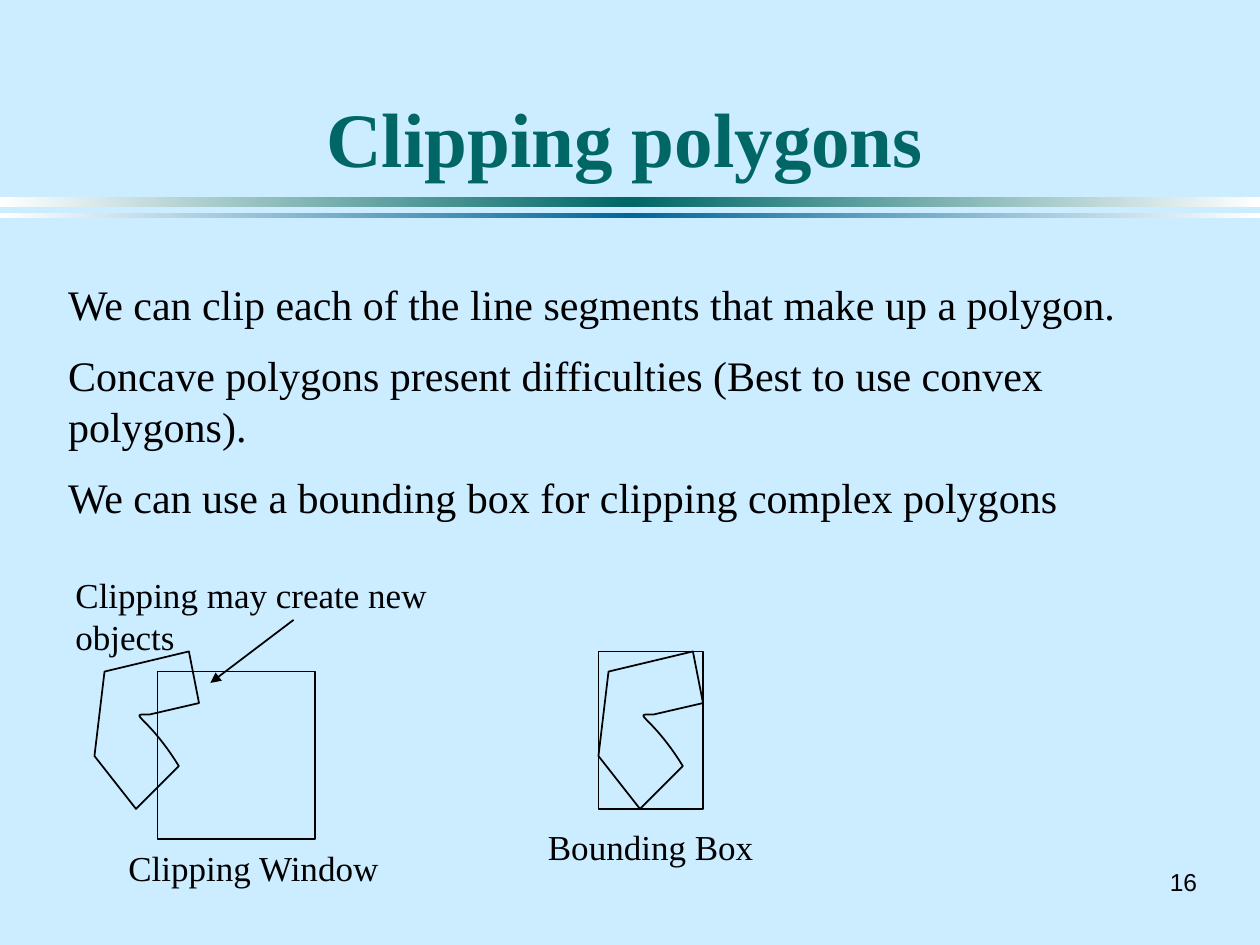
from copy import deepcopy

from pptx import Presentation
from pptx.dml.color import RGBColor
from pptx.enum.shapes import MSO_CONNECTOR, MSO_SHAPE
from pptx.enum.text import MSO_ANCHOR, MSO_AUTO_SIZE, PP_ALIGN
from pptx.oxml.ns import qn
from pptx.util import Inches, Pt

SKY = RGBColor(0xCC, 0xEC, 0xFF)
TEAL = RGBColor(0x00, 0x66, 0x66)
BLUE = RGBColor(0x00, 0x66, 0x99)
WHITE = RGBColor(0xFF, 0xFF, 0xFF)
BLACK = RGBColor(0x00, 0x00, 0x00)
SERIF = "Times New Roman"

STATEMENTS = (
    "We can clip each of the line segments that make up a polygon.",
    "Concave polygons present difficulties (Best to use convex polygons).",
    "We can use a bounding box for clipping complex polygons",
)

# Polygon measured from the top left corner of its bounding box
POLYGON_SIZE = (0.83, 1.25)
CURVE = ((0.67, 0.91), (0.41, 0.49), (0.25, 0.5), (0.44, 0.5))
CORNERS = ((0.83, 0.41), (0.75, 0), (0.08, 0.16), (0, 0.83), (0.33, 1.25))


def place(shape, left, top, width, height):
    shape.left, shape.top = Inches(left), Inches(top)
    shape.width, shape.height = Inches(width), Inches(height)


def add_span(para, text, size, color=BLACK, font=SERIF, bold=False):
    span = para.add_run()
    span.text = text
    span.font.size = Pt(size)
    span.font.name = font
    span.font.bold = bold
    span.font.color.rgb = color


def set_title(page, text):
    title = page.shapes.title
    place(title, 0.67, 0.25, 8.58, 1.25)
    frame = title.text_frame
    frame.auto_size = MSO_AUTO_SIZE.NONE
    frame.vertical_anchor = MSO_ANCHOR.BOTTOM
    para = frame.paragraphs[0]
    para.alignment = PP_ALIGN.CENTER
    add_span(para, text, 44, TEAL, bold=True)


def set_body(page, statements):
    body = page.placeholders[1]
    place(body, 0.44, 2.16, 9.06, 2.1)
    frame = body.text_frame
    frame.auto_size = MSO_AUTO_SIZE.NONE
    for index, statement in enumerate(statements):
        para = frame.add_paragraph() if index else frame.paragraphs[0]
        para.space_before = Pt(12 if index else 0)
        properties = para._p.get_or_add_pPr()
        properties.set("marL", "0")
        properties.set("indent", "0")
        properties.append(properties.makeelement(qn("a:buNone"), {}))
        add_span(para, statement, 24)


def add_label(page, text, left, top, width, height=0.43, size=20, font=SERIF,
              align=PP_ALIGN.LEFT, wrap=False):
    box = page.shapes.add_textbox(Inches(left), Inches(top), Inches(width), Inches(height))
    box.text_frame.word_wrap = wrap
    para = box.text_frame.paragraphs[0]
    para.alignment = align
    add_span(para, text, size, font=font)


def add_gradient_bar(page, top, height, color):
    """Full-width bar that fades from the middle colour to white at both ends."""
    bar = page.shapes.add_shape(MSO_SHAPE.RECTANGLE, 0, Inches(top), Inches(10), Inches(height))
    bar.shadow.inherit = False
    bar.line.fill.background()
    bar.fill.gradient()
    bar.fill.gradient_angle = 0
    stop_list = bar._element.spPr.find(qn("a:gradFill")).find(qn("a:gsLst"))
    stop_list.insert(1, deepcopy(stop_list[0]))
    stops = zip(bar.fill.gradient_stops, (0, 0.5, 1), (WHITE, color, WHITE))
    for stop, position, stop_color in stops:
        stop.position = position
        stop.color.rgb = stop_color


def outline(shape):
    shape.shadow.inherit = False
    shape.fill.background()
    shape.line.color.rgb = BLACK
    shape.line.width = Pt(1)


def add_frame(page, left, top, width, height):
    outline(page.shapes.add_shape(MSO_SHAPE.RECTANGLE, Inches(left), Inches(top),
                                  Inches(width), Inches(height)))


def curve_points(start, first, second, end, steps=24):
    """Points along a cubic Bezier curve, both ends included."""
    points = []
    for step in range(steps + 1):
        t = step / steps
        weights = ((1 - t) ** 3, 3 * t * (1 - t) ** 2, 3 * t ** 2 * (1 - t), t ** 3)
        points.append(tuple(
            sum(weight * value for weight, value in zip(weights, values))
            for values in zip(start, first, second, end)))
    return points


def add_polygon(page, left, top):
    points = [(Inches(left + x), Inches(top + y))
              for x, y in (*curve_points(*CURVE), *CORNERS)]
    builder = page.shapes.build_freeform(*points[0])
    builder.add_line_segments(points[1:], close=True)
    outline(builder.convert_to_shape())


def add_arrow(page, start, end):
    arrow = page.shapes.add_connector(MSO_CONNECTOR.STRAIGHT,
                                      *map(Inches, (*start, *end)))
    arrow.line.color.rgb = BLACK
    arrow.line.width = Pt(1)
    line = arrow.line._get_or_add_ln()
    line.append(line.makeelement(qn("a:tailEnd"), {"type": "triangle"}))
    properties = arrow._element.spPr
    properties.append(properties.makeelement(qn("a:effectLst"), {}))


def main():
    deck = Presentation()
    deck.slide_width, deck.slide_height = Inches(10), Inches(7.5)
    page = deck.slides.add_slide(deck.slide_layouts[1])
    page.background.fill.solid()
    page.background.fill.fore_color.rgb = SKY

    add_gradient_bar(page, 1.56, 0.08, TEAL)
    add_gradient_bar(page, 1.69, 0.04, BLUE)
    add_label(page, "16", 9.17, 6.83, 0.43, 0.33, 14, "Arial", PP_ALIGN.RIGHT)
    set_title(page, "Clipping polygons")
    set_body(page, STATEMENTS)

    add_polygon(page, 0.75, 5.17)
    add_frame(page, 1.25, 5.33, 1.25, 1.33)
    add_label(page, "Clipping may create new objects", 0.5, 4.5, 3.75, wrap=True)
    add_arrow(page, (2.33, 4.92), (1.67, 5.42))
    add_label(page, "Clipping Window", 0.92, 6.67, 2.2)

    add_polygon(page, 4.75, 5.17)
    add_frame(page, 4.75, 5.17, *POLYGON_SIZE)
    add_label(page, "Bounding Box", 4.25, 6.5, 1.83)

    deck.save("out.pptx")


if __name__ == "__main__":
    main()
